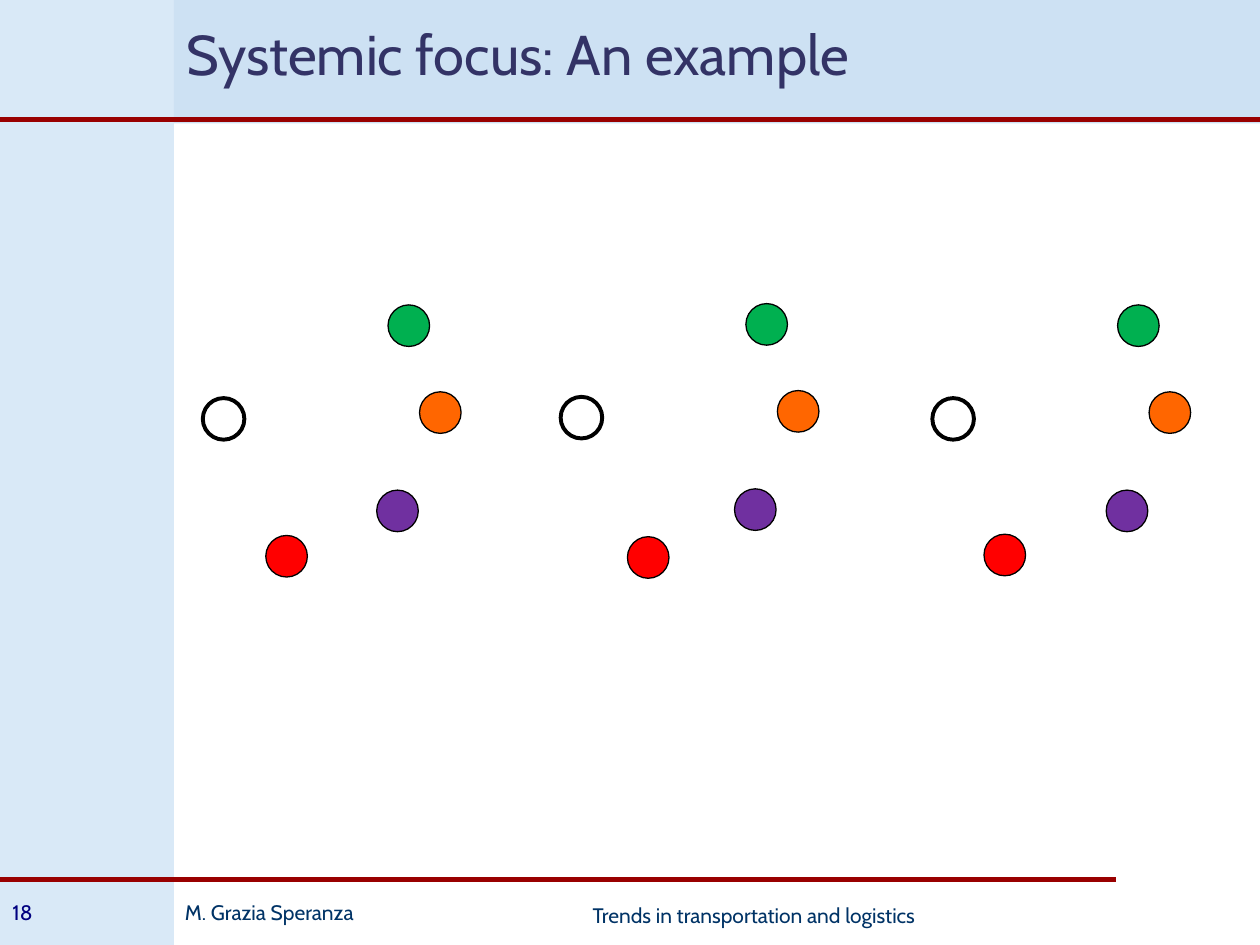
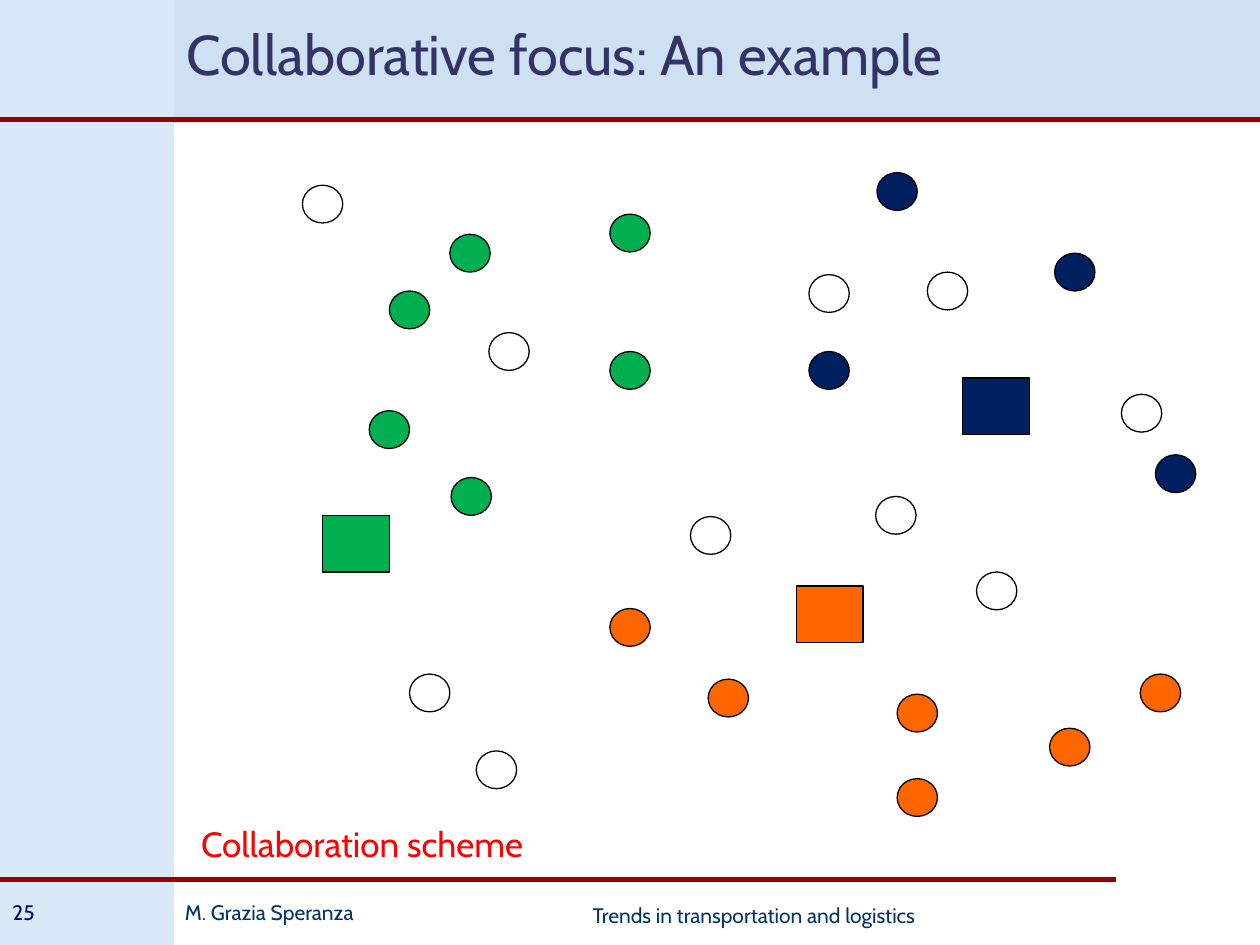
from lxml.etree import SubElement
from pptx import Presentation
from pptx.dml.color import RGBColor
from pptx.enum.shapes import MSO_CONNECTOR, MSO_SHAPE
from pptx.enum.text import MSO_ANCHOR, MSO_AUTO_SIZE, PP_ALIGN
from pptx.oxml.ns import qn
from pptx.util import Pt

PX = 9144
FONT = "Cabin"
BLACK, RED, GREEN, ORANGE = "000000", "FF0000", "00B050", "FF6600"
PURPLE, NAVY = "7030A0", "002060"
SIDE, BAND, RULE = "D9E9F7", "CDE1F3", "990000"
TITLE, FOOTER, NUMBER = "333366", "003366", "000080"


def add_figure(page, preset, place, fill=None, width=0.75):
    figure = page.shapes.add_shape(preset, *[length * PX for length in place])
    figure.shadow.inherit = False
    if fill:
        figure.fill.solid()
        figure.fill.fore_color.rgb = RGBColor.from_string(fill)
    else:
        figure.fill.background()
    if width:
        figure.line.color.rgb = RGBColor.from_string(BLACK)
        figure.line.width = Pt(width)
    else:
        figure.line.fill.background()
    return figure


def write(box, place, text, size, color, align=PP_ALIGN.LEFT, wrap=True):
    box.left, box.top, box.width, box.height = [length * PX for length in place]
    frame = box.text_frame
    frame.text = text
    frame.word_wrap = wrap
    frame.auto_size = MSO_AUTO_SIZE.NONE
    paragraph = frame.paragraphs[0]
    paragraph.alignment = align
    span = paragraph.runs[0]
    span.font.name = FONT
    span.font.size = Pt(size)
    span.font.color.rgb = RGBColor.from_string(color)


deck = Presentation()
deck.slide_width, deck.slide_height = 1000 * PX, 750 * PX

pages = []
for heading, number in [
    ("Systemic focus: An example", "18"),
    ("Collaborative focus: An example", "25"),
]:
    page = deck.slides.add_slide(deck.slide_layouts[5])
    pages.append(page)
    sidebar = add_figure(page, MSO_SHAPE.ROUNDED_RECTANGLE, (0, 0, 138, 750), SIDE, 0)
    sidebar.adjustments[0] = 0.001
    add_figure(page, MSO_SHAPE.RECTANGLE, (138, 0, 862, 98), BAND, 0)
    for top, right, width in [(698, 886, 3.12), (95, 1000, 3)]:
        rule = page.shapes.add_connector(
            MSO_CONNECTOR.STRAIGHT, 0, top * PX, right * PX, top * PX
        )
        rule.line.color.rgb = RGBColor.from_string(RULE)
        rule.line.width = Pt(width)
        SubElement(rule.element.spPr, qn("a:effectLst"))
    for place, text, color, align, wrap in [
        ((137, 709, 164, 31), "M. Grazia Speranza", FOOTER, PP_ALIGN.LEFT, False),
        ((327, 711, 543, 39), "Trends in transportation and logistics",
         FOOTER, PP_ALIGN.CENTER, True),
        ((0, 709, 118, 32), number, NUMBER, PP_ALIGN.LEFT, True),
    ]:
        write(page.shapes.add_textbox(0, 0, 0, 0), place, text, 12, color, align, wrap)
    title = page.shapes.title
    write(title, (138, -14, 862, 112), heading, 32, TITLE)
    title.text_frame.vertical_anchor = MSO_ANCHOR.MIDDLE
    page.shapes.element.append(title.element)

systemic, collaborative = pages

customer_offsets = [(147, -74, GREEN), (172, -5, ORANGE), (138, 73, PURPLE)]
for depot_x, depot_y, red_x, red_y in [
    (161, 316, 211, 425),
    (445, 315, 498, 426),
    (740, 316, 781, 424),
]:
    add_figure(systemic, MSO_SHAPE.OVAL, (depot_x, depot_y, 33, 33), width=2.25)
    for across, down, color in customer_offsets:
        place = (depot_x + across, depot_y + down, 33, 33)
        add_figure(systemic, MSO_SHAPE.OVAL, place, color)
    add_figure(systemic, MSO_SHAPE.OVAL, (red_x, red_y, 33, 33), RED)

customers = {
    None: [(240, 147), (388, 264), (736, 216), (378, 596), (325, 535), (775, 454),
           (548, 410), (695, 394), (890, 313), (642, 218)],
    GREEN: [(293, 326), (358, 379), (357, 186), (484, 279), (484, 170), (309, 231)],
    ORANGE: [(562, 539), (712, 551), (484, 483), (712, 618), (833, 578), (905, 535)],
    NAVY: [(696, 137), (642, 279), (917, 361), (837, 201)],
}
for color, spots in customers.items():
    for left, top in spots:
        add_figure(collaborative, MSO_SHAPE.OVAL, (left, top, 32, 30), color)

for left, top, color in [(256, 409, GREEN), (632, 465, ORANGE), (764, 300, NAVY)]:
    add_figure(collaborative, MSO_SHAPE.RECTANGLE, (left, top, 53, 45), color)

caption = collaborative.shapes.add_textbox(0, 0, 0, 0)
write(caption, (-114, 648, 803, 44), "Collaboration scheme", 20, RED, PP_ALIGN.CENTER)

deck.save("out.pptx")
